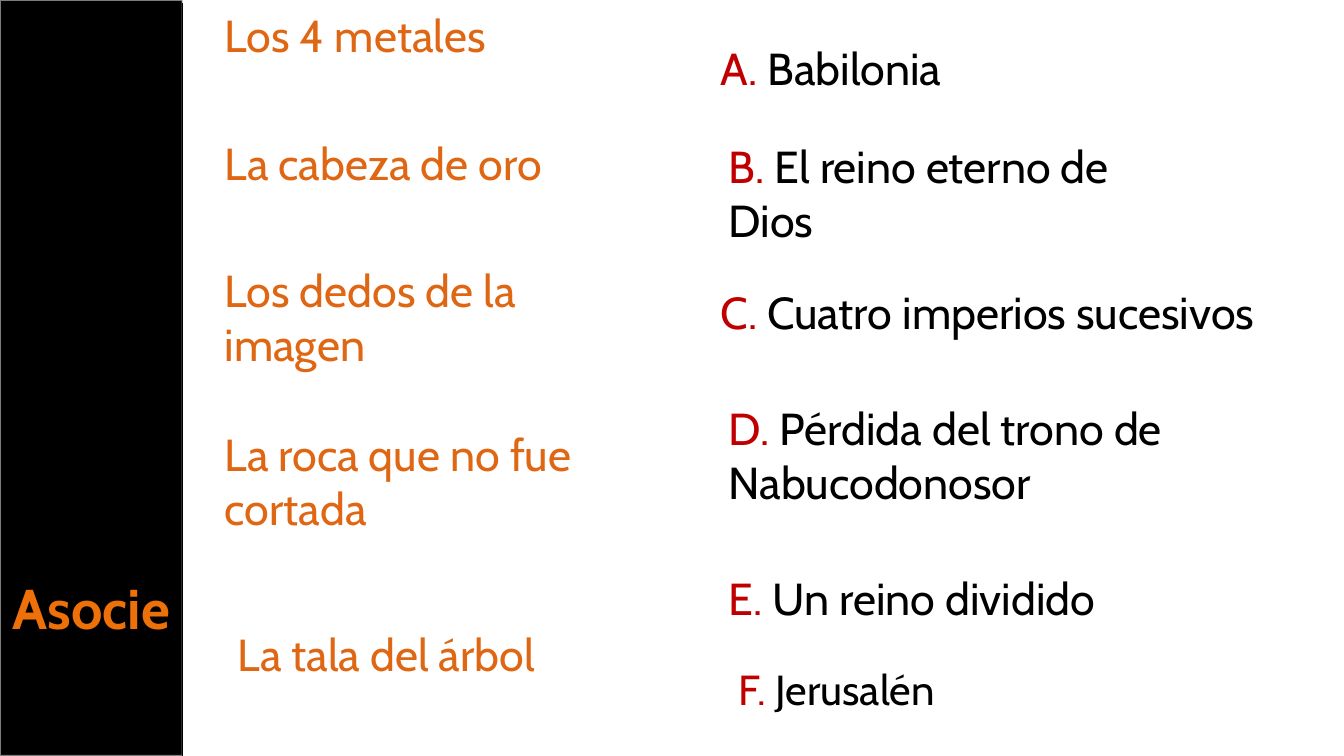
import pptx
import pptx.dml.color
import pptx.enum.shapes
import pptx.enum.text
import pptx.oxml
import pptx.oxml.ns
import pptx.util
from pptx.util import Cm

RGBColor = pptx.dml.color.RGBColor
BLACK = RGBColor(0x00, 0x00, 0x00)
PALE_GRAY = RGBColor(0xF9, 0xF9, 0xF9)
TITLE_ORANGE = RGBColor(0xEE, 0x70, 0x08)
CLUE_ORANGE = RGBColor(0xDF, 0x66, 0x13)
LETTER_RED = RGBColor(0xC0, 0x00, 0x00)

SLIDE_WIDTH = 33.87
SLIDE_HEIGHT = 19.05
BAND_WIDTH = 4.6

CLUES = [
    ("Los 4 metales", 5.41, 0.08, 11.66, 1.63),
    ("La cabeza de oro", 5.41, 3.3, 9.75, 1.63),
    ("Los dedos de la imagen", 5.41, 6.5, 10.49, 3),
    ("La roca que no fue cortada", 5.41, 10.64, 10.31, 3),
    ("La tala del árbol", 5.74, 15.67, 10.82, 1.63),
]
ANSWERS = [
    ("Babilonia", 17.91, 0.89, 11.51, 1.63, 32),
    ("El reino eterno de Dios", 18.11, 3.38, 12.14, 3, 32),
    ("Cuatro imperios sucesivos", 17.91, 7.04, 14, 1.63, 32),
    ("Pérdida del trono de Nabucodonosor", 18.11, 9.98, 11.94, 3, 32),
    ("Un reino dividido", 18.11, 14.25, 14.2, 1.63, 32),
    ("Jerusalén", 18.36, 16.59, 7.7, 1.55, 30),
]


class MatchingSlide:
    font_name = "Cabin"

    def __init__(self, presentation):
        self.slide = presentation.slides.add_slide(presentation.slide_layouts[5])
        self.shapes = self.slide.shapes

    def style(self, run, size, color, bold=False):
        run.font.name = self.font_name
        run.font.size = pptx.util.Pt(size)
        run.font.color.rgb = color
        run.font.bold = bold

    def band(self, width, height):
        shape = self.shapes.add_shape(
            pptx.enum.shapes.MSO_SHAPE.RECTANGLE, 0, 0, Cm(width), Cm(height))
        shape.shadow.inherit = False
        shape.fill.solid()
        shape.fill.fore_color.rgb = BLACK
        shape.line.color.rgb = PALE_GRAY
        shape.line.width = pptx.util.Pt(1.35)
        line_color = shape.line._ln.find(".//" + pptx.oxml.ns.qn("a:srgbClr"))
        line_color.append(pptx.oxml.parse_xml(
            f'<a:alpha {pptx.oxml.ns.nsdecls("a")} val="50000"/>'))

    def title(self, text, top, width, height):
        title = self.shapes.title
        title.left, title.top = 0, Cm(top)
        title.width, title.height = Cm(width), Cm(height)
        title.element.getparent().append(title.element)
        frame = title.text_frame
        frame.text = text
        frame.word_wrap = True
        frame.auto_size = pptx.enum.text.MSO_AUTO_SIZE.NONE
        frame.vertical_anchor = pptx.enum.text.MSO_ANCHOR.TOP
        paragraph = frame.paragraphs[0]
        paragraph.alignment = pptx.enum.text.PP_ALIGN.CENTER
        self.style(paragraph.runs[0], 40, TITLE_ORANGE, bold=True)

    def text(self, parts, left, top, width, height, size=32):
        box = self.shapes.add_textbox(Cm(left), Cm(top), Cm(width), Cm(height))
        frame = box.text_frame
        frame.word_wrap = True
        frame.auto_size = pptx.enum.text.MSO_AUTO_SIZE.SHAPE_TO_FIT_TEXT
        for text, color in parts:
            run = frame.paragraphs[0].add_run()
            run.text = text
            self.style(run, size, color)

    def vertical_line(self, left, top, bottom):
        connector = self.shapes.add_connector(
            pptx.enum.shapes.MSO_CONNECTOR.STRAIGHT,
            Cm(left), Cm(top), Cm(left), Cm(bottom))
        connector.line.color.rgb = BLACK
        connector.line.width = pptx.util.Pt(0.85)
        connector.element.spPr.append(pptx.oxml.parse_xml(
            f'<a:effectLst {pptx.oxml.ns.nsdecls("a")}/>'))


def main():
    presentation = pptx.Presentation()
    presentation.slide_width = Cm(SLIDE_WIDTH)
    presentation.slide_height = Cm(SLIDE_HEIGHT)

    matching = MatchingSlide(presentation)
    matching.band(BAND_WIDTH, SLIDE_HEIGHT)
    for clue, *place in CLUES:
        matching.text([(clue, CLUE_ORANGE)], *place)
    for letter, (answer, *place) in zip("ABCDEF", ANSWERS):
        matching.text([(f"{letter}. ", LETTER_RED), (answer, BLACK)], *place)
    matching.title("Asocie", 14.33, BAND_WIDTH, 1.96)
    matching.vertical_line(BAND_WIDTH, 0.08, SLIDE_HEIGHT)

    presentation.save("out.pptx")


if __name__ == "__main__":
    main()
